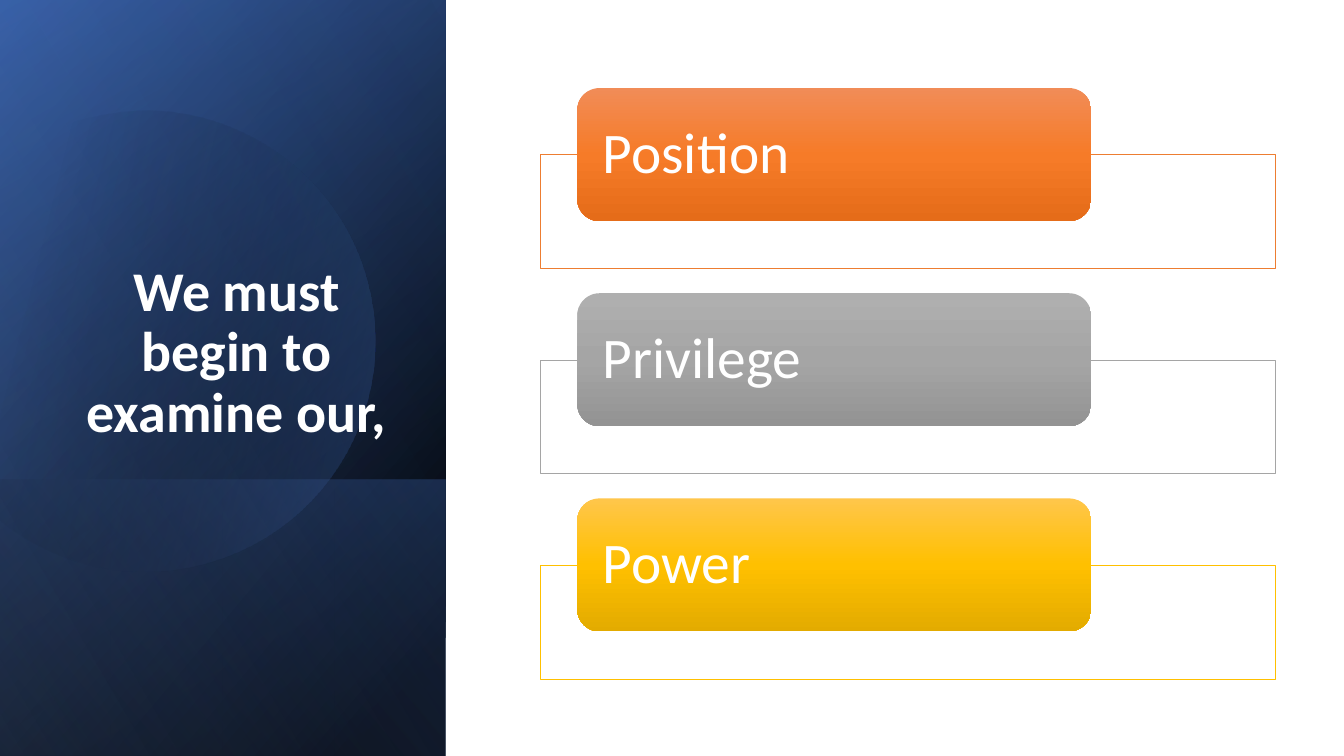
from dataclasses import dataclass
from math import cos, radians, sin

from lxml.etree import SubElement
from pptx import Presentation
from pptx.dml.color import RGBColor
from pptx.enum.shapes import MSO_SHAPE as Preset
from pptx.enum.text import MSO_ANCHOR as Anchor, PP_ALIGN as Align
from pptx.oxml.ns import qn
from pptx.util import Cm, Pt

COLORS = {
    "white": "FFFFFF", "black": "000000",
    "blue": "4472C4", "deep blue": "2F5597", "pale blue": "8FAADC",
    "orange": "ED7D31", "orange top": "F18C57", "orange mid": "F67B28", "orange low": "E56C19",
    "gray": "A5A5A5", "gray top": "AFAFAF", "gray low": "939393",
    "gold": "FFC000", "gold top": "FFC64B", "gold low": "E3AB00",
}
FONT = "Calibri"
Point = tuple[float, float]


@dataclass(frozen=True)
class Stop:
    position: int
    color: str
    alpha: int = 100


@dataclass(frozen=True)
class Panel:
    box: tuple[float, float, float, float]  # cm, before the quarter turn
    angle: int
    stops: tuple[Stop, ...]


@dataclass(frozen=True)
class Topic:
    label: str
    outline: str
    shades: tuple[str, str, str]


FULL_PANEL = (-3.91, 3.91, 19.05, 11.23)
BACK_PANELS = (
    Panel(FULL_PANEL, 50, (Stop(8, "black"), Stop(100, "deep blue"))),
    Panel(FULL_PANEL, 30, (Stop(0, "black", 0), Stop(99, "blue", 46))),
    Panel((2.13, 9.96, 6.96, 11.23), 130, (Stop(2, "blue", 29), Stop(100, "black", 30))),
)
FRONT_PANEL = Panel(FULL_PANEL, 120, (Stop(0, "black", 0), Stop(99, "pale blue", 11)))

# Disc outline in cm as it appears on the slide: three points make a curve, one a line
DISC_START = (3.78, 2.79)
DISC_SEGMENTS = (
    ((6.2, 2.84), (8.51, 4.5), (9.22, 6.99)),
    ((10.11, 10.08), (8.33, 13.28), (5.26, 14.17)),
    ((3.33, 14.73), (1.35, 14.25), (-0.08, 13.06)),
    ((-0.38, 12.78),),
    ((-0.38, 4.45),),
    ((0, 4.09),),
    ((0.58, 3.61), (1.27, 3.25), (2.03, 3.02)),
    ((2.62, 2.87), (3.2, 2.79), DISC_START),
)
DISC_CENTER = (4.03, 8.5)
DISC_TURN = -16.1
DISC_STOPS = (Stop(29, "black", 0), Stop(100, "blue", 43))
CURVE_STEPS = 24

TOPICS = (
    Topic("Position", "orange", ("orange top", "orange mid", "orange low")),
    Topic("Privilege", "gray", ("gray top", "gray", "gray low")),
    Topic("Power", "gold", ("gold top", "gold", "gold low")),
)
TOPIC_PITCH = 5.17


def rgb(name: str) -> RGBColor:
    return RGBColor.from_string(COLORS[name])


def apply(target, formats: dict) -> None:
    for name, value in formats.items():
        setattr(target, name, value)


def add_alpha(color, percent: int) -> None:
    SubElement(color, qn("a:alpha"), val=str(percent * 1000))


def fill_gradient(shape, stops: tuple[Stop, ...], angle: int) -> None:
    shape.shadow.inherit = False
    shape.line.fill.background()
    shape.fill.solid()
    solid = shape._element.spPr.find(qn("a:solidFill"))
    gradient = solid.makeelement(qn("a:gradFill"), {"rotWithShape": "1"})
    stop_list = SubElement(gradient, qn("a:gsLst"))
    for stop in stops:
        entry = SubElement(stop_list, qn("a:gs"), pos=str(stop.position * 1000))
        color = SubElement(entry, qn("a:srgbClr"), val=COLORS[stop.color])
        if stop.alpha < 100:
            add_alpha(color, stop.alpha)
    SubElement(gradient, qn("a:lin"), ang=str(angle * 60000), scaled="0")
    solid.getparent().replace(solid, gradient)


def add_panel(shapes, panel: Panel) -> None:
    rect = shapes.add_shape(Preset.RECTANGLE, *map(Cm, panel.box))
    rect.rotation = 90
    rect._element.spPr.xfrm.set("flipH", "1")
    fill_gradient(rect, panel.stops, panel.angle)


def curve_point(points: tuple[Point, ...], t: float) -> Point:
    weights = ((1 - t) ** 3, 3 * t * (1 - t) ** 2, 3 * t ** 2 * (1 - t), t ** 3)
    return tuple(sum(w * p[axis] for w, p in zip(weights, points)) for axis in (0, 1))


def unturn(point: Point) -> tuple[int, int]:
    """Turn a slide point back to the disc's unrotated frame."""
    turn = radians(-DISC_TURN)
    dx, dy = point[0] - DISC_CENTER[0], point[1] - DISC_CENTER[1]
    return (Cm(DISC_CENTER[0] + dx * cos(turn) - dy * sin(turn)),
            Cm(DISC_CENTER[1] + dx * sin(turn) + dy * cos(turn)))


def add_disc(shapes) -> None:
    outline = [DISC_START]
    for segment in DISC_SEGMENTS:
        if len(segment) == 1:
            outline.append(segment[0])
        else:
            curve = (outline[-1], *segment)
            outline += [curve_point(curve, step / CURVE_STEPS) for step in range(1, CURVE_STEPS + 1)]
    start, *rest = map(unturn, outline)
    builder = shapes.build_freeform(*start)
    builder.add_line_segments(rest, close=True)
    disc = builder.convert_to_shape()
    disc.rotation = DISC_TURN
    fill_gradient(disc, DISC_STOPS, 30)


def write(shape, text: str, frame_formats: dict, align: Align, font_formats: dict) -> None:
    frame = shape.text_frame
    apply(frame, {"word_wrap": True, **frame_formats})
    paragraph = frame.paragraphs[0]
    apply(paragraph, {"alignment": align, "line_spacing": 0.9})
    run = paragraph.add_run()
    run.text = text
    apply(run.font, {"name": FONT, **font_formats})
    run.font.color.rgb = rgb("white")


def add_topic(shapes, topic: Topic, offset: float) -> None:
    # Outlined frame behind the card
    frame = shapes.add_shape(Preset.RECTANGLE, Cm(13.61), Cm(3.9 + offset), Cm(18.52), Cm(2.87))
    frame.shadow.inherit = False
    frame.fill.solid()
    frame.fill.fore_color.rgb = rgb("white")
    add_alpha(frame._element.spPr.find(qn("a:solidFill"))[0], 90)
    frame.line.color.rgb = rgb(topic.outline)
    frame.line.width = Pt(0.5)

    # Gradient card with the label
    card = shapes.add_shape(Preset.ROUNDED_RECTANGLE, Cm(14.55), Cm(2.22 + offset), Cm(12.95), Cm(3.35))
    fill_gradient(card, tuple(Stop(i * 50, shade) for i, shade in enumerate(topic.shades)), 90)
    write(card, topic.label,
          {"vertical_anchor": Anchor.MIDDLE, "margin_left": Cm(0.48), "margin_right": Cm(0.48),
           "margin_top": 0, "margin_bottom": 0},
          Align.LEFT, {"size": Pt(41)})


def main() -> None:
    deck = Presentation()
    apply(deck, {"slide_width": Cm(33.87), "slide_height": Cm(19.05)})
    slide = deck.slides.add_slide(deck.slide_layouts[5])
    shapes = slide.shapes

    # Layered blue side panel
    for panel in BACK_PANELS:
        add_panel(shapes, panel)
    add_disc(shapes)
    add_panel(shapes, FRONT_PANEL)

    # Title, raised above the panel
    title = shapes.title
    apply(title, {"left": Cm(1.63), "top": Cm(4.67), "width": Cm(8.66), "height": Cm(6.65)})
    write(title, "We must begin to examine our,", {"vertical_anchor": Anchor.BOTTOM},
          Align.CENTER, {"size": Pt(40), "bold": True})
    shapes._spTree.append(title._element)

    # Topics
    for row, topic in enumerate(TOPICS):
        add_topic(shapes, topic, row * TOPIC_PITCH)

    deck.save("out.pptx")


if __name__ == "__main__":
    main()
